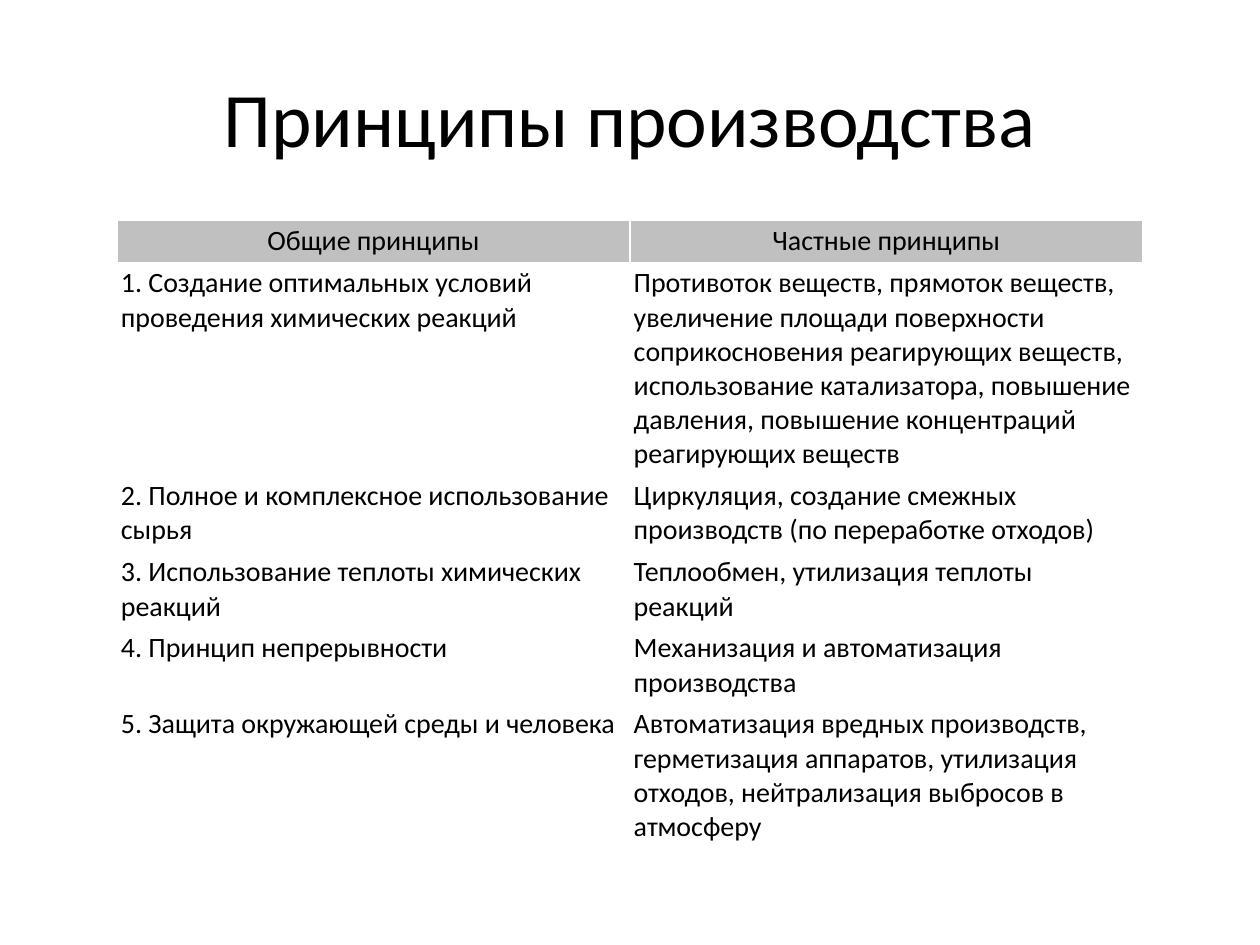
from dataclasses import dataclass

from pptx import Presentation
from pptx.dml.color import RGBColor
from pptx.enum.text import MSO_ANCHOR, PP_ALIGN
from pptx.util import Inches, Pt

LEFT, CENTER = PP_ALIGN.LEFT, PP_ALIGN.CENTER
TOP, MIDDLE = MSO_ANCHOR.TOP, MSO_ANCHOR.MIDDLE
TITLE_ONLY = 5


@dataclass(frozen=True)
class Theme:
    font: str = "Calibri"
    title_size: int = 44
    table_size: int = 16
    text: str = "000000"
    header_fill: str = "C0C0C0"
    body_fill: str = "FFFFFF"


THEME = Theme()

TITLE = "Принципы производства"
PRINCIPLES = [
    ("Общие принципы", "Частные принципы"),
    ("1. Создание оптимальных условий проведения химических реакций",
     "Противоток веществ, прямоток веществ, увеличение площади поверхности "
     "соприкосновения реагирующих веществ, использование катализатора, "
     "повышение давления, повышение концентраций реагирующих веществ"),
    ("2. Полное и комплексное использование сырья",
     "Циркуляция, создание смежных производств (по переработке отходов)"),
    ("3. Использование теплоты химических реакций",
     "Теплообмен, утилизация теплоты реакций"),
    ("4. Принцип непрерывности",
     "Механизация и автоматизация производства"),
    ("5. Защита окружающей среды и человека",
     "Автоматизация вредных производств, герметизация аппаратов, "
     "утилизация отходов, нейтрализация выбросов в атмосферу"),
]
ROW_HEIGHTS = [0.33, 1.68, 0.6, 0.6, 0.6, 1.14]
CELL_MARGIN = 0.03


def write_text(tf, text, *, size, align=LEFT):
    tf.word_wrap = True
    p = tf.paragraphs[0]
    p.alignment = align
    r = p.add_run()
    r.text = text
    r.font.name = THEME.font
    r.font.size = Pt(size)
    r.font.color.rgb = RGBColor.from_string(THEME.text)


def place_title(s, left, top, width, height):
    sp = s.shapes.title
    sp.left, sp.top = Inches(left), Inches(top)
    sp.width, sp.height = Inches(width), Inches(height)
    sp.text_frame.vertical_anchor = MIDDLE
    write_text(sp.text_frame, TITLE, size=THEME.title_size, align=CENTER)


def fill_cell(cell, text, is_header):
    cell.margin_left = cell.margin_right = Inches(CELL_MARGIN)
    cell.margin_top = cell.margin_bottom = Inches(CELL_MARGIN)
    cell.vertical_anchor = TOP
    cell.fill.solid()
    fill = THEME.header_fill if is_header else THEME.body_fill
    cell.fill.fore_color.rgb = RGBColor.from_string(fill)
    write_text(cell.text_frame, text, size=THEME.table_size,
               align=CENTER if is_header else LEFT)
    if is_header:
        cell.text_frame.paragraphs[0].runs[0].font.bold = False


def place_table(s, left, top, width, height):
    cols = len(PRINCIPLES[0])
    table = s.shapes.add_table(len(PRINCIPLES), cols, Inches(left), Inches(top),
                               Inches(width), Inches(height)).table
    table.horz_banding = False
    for column in table.columns:
        column.width = Inches(width / cols)
    scale = height / sum(ROW_HEIGHTS)
    for i, (row, texts) in enumerate(zip(table.rows, PRINCIPLES)):
        row.height = Inches(ROW_HEIGHTS[i] * scale)
        for cell, text in zip(row.cells, texts):
            fill_cell(cell, text, is_header=i == 0)


def main():
    prs = Presentation()
    prs.slide_width, prs.slide_height = Inches(10), Inches(7.5)
    s = prs.slides.add_slide(prs.slide_layouts[TITLE_ONLY])
    place_title(s, 0.5, 0.3, 9, 1.25)
    place_table(s, 0.93, 1.75, 8.14, 4.95)
    prs.save("out.pptx")


if __name__ == "__main__":
    main()
